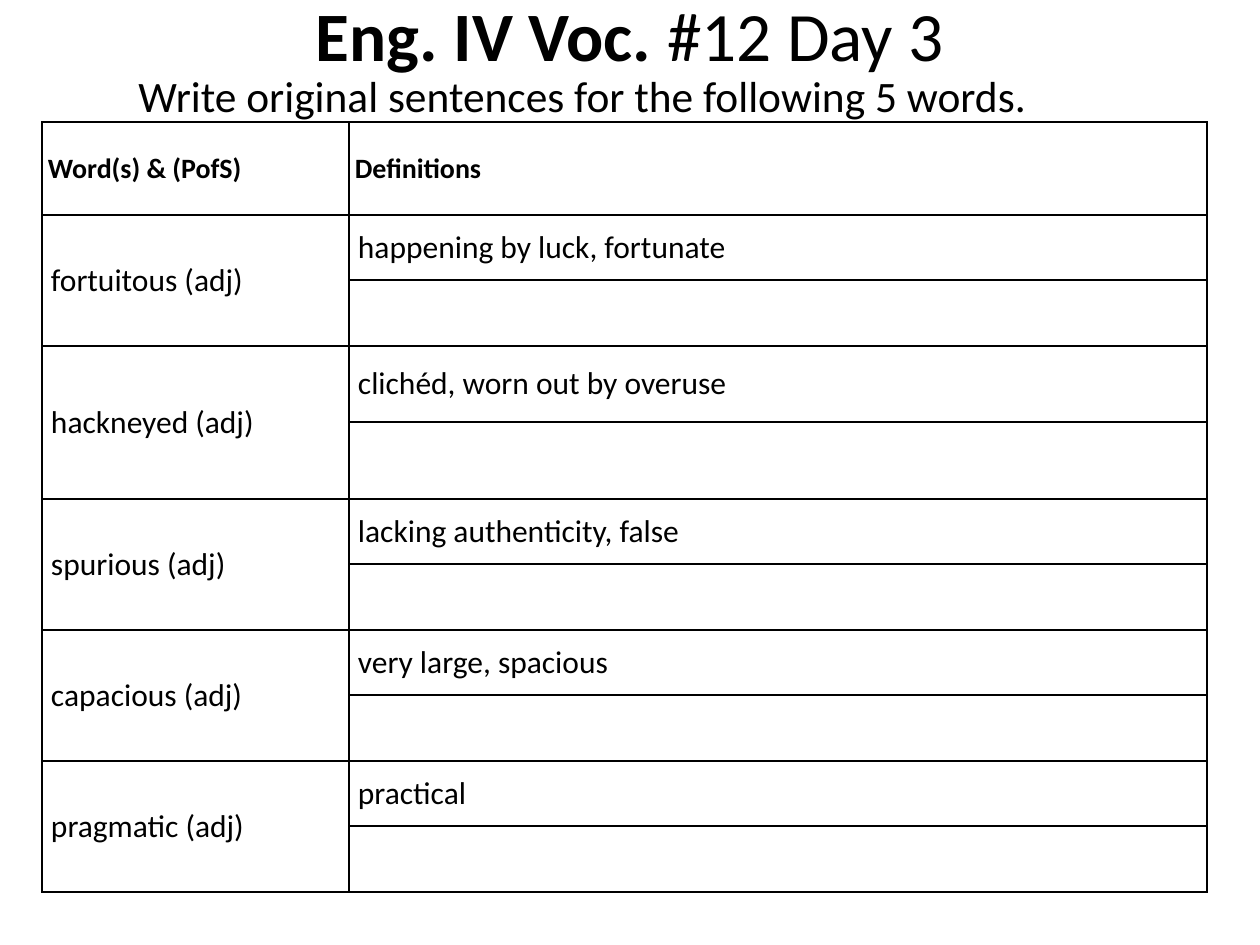
from dataclasses import dataclass

from lxml import etree
from pptx import Presentation
from pptx.dml.color import RGBColor
from pptx.enum.text import MSO_ANCHOR, PP_ALIGN
from pptx.oxml.ns import qn
from pptx.util import Emu, Pt

EMU_PER_PX = 914400 / 126
BLANK_LAYOUT = 6
LEFT, CENTER = PP_ALIGN.LEFT, PP_ALIGN.CENTER
TOP, MIDDLE = MSO_ANCHOR.TOP, MSO_ANCHOR.MIDDLE


@dataclass(frozen=True)
class Theme:
    font: str = "Calibri"
    ink: str = "000000"
    title_size: float = 39.6
    instruction_size: float = 24.8
    header_size: float = 16
    word_size: float = 18
    border_width: float = 1


THEME = Theme()
HEADERS = ("Word(s) & (PofS)", "Definitions")
HEADER_HEIGHT = 93
COLUMN_WIDTHS = (307, 858)
WORDS = (
    ("fortuitous (adj)", "happening by luck, fortunate", 131),
    ("hackneyed (adj)", "clichéd, worn out by overuse", 153),
    ("spurious (adj)", "lacking authenticity, false", 131),
    ("capacious (adj)", "very large, spacious", 131),
    ("pragmatic (adj)", "practical", 131),
)


def px(length):
    return Emu(round(length * EMU_PER_PX))


def write_text(frame, *pieces, size, align=LEFT):
    para = frame.paragraphs[0]
    para.alignment = align
    for text, bold in pieces:
        span = para.add_run()
        span.text = text
        span.font.name = THEME.font
        span.font.size = Pt(size)
        span.font.bold = bold
        span.font.color.rgb = RGBColor.from_string(THEME.ink)


def add_text_box(page, left, top, width, height, *pieces, size, align=LEFT, anchor=TOP):
    box = page.shapes.add_textbox(px(left), px(top), px(width), px(height))
    box.text_frame.word_wrap = True
    box.text_frame.vertical_anchor = anchor
    write_text(box.text_frame, *pieces, size=size, align=align)


def style_cell(cell):
    properties = cell._tc.get_or_add_tcPr()
    for side in ("lnL", "lnR", "lnT", "lnB"):
        line = etree.SubElement(properties, qn(f"a:{side}"), w=str(Pt(THEME.border_width)))
        fill = etree.SubElement(line, qn("a:solidFill"))
        etree.SubElement(fill, qn("a:srgbClr"), val=THEME.ink)
    cell.fill.background()


def fill_cell(cell, text, size, margin, bold=False):
    cell.vertical_anchor = MIDDLE
    cell.margin_left = cell.margin_right = px(margin)
    cell.margin_top = cell.margin_bottom = 0
    write_text(cell.text_frame, (text, bold), size=size)


def add_word_table(page, left, top):
    heights = [HEADER_HEIGHT]
    for _, _, height in WORDS:
        heights += [height // 2, height - height // 2]
    frame = page.shapes.add_table(
        len(heights), len(COLUMN_WIDTHS),
        px(left), px(top), px(sum(COLUMN_WIDTHS)), px(sum(heights)),
    )
    table = frame.table
    table.first_row = table.horz_banding = False
    for column, width in zip(table.columns, COLUMN_WIDTHS):
        column.width = px(width)
    for row, height in zip(table.rows, heights):
        row.height = px(height)
    for cell in table.iter_cells():
        style_cell(cell)
    for column, header in enumerate(HEADERS):
        fill_cell(table.cell(0, column), header, THEME.header_size, 6, bold=True)
    for index, (word, definition, _) in enumerate(WORDS):
        row = 1 + 2 * index
        table.cell(row, 0).merge(table.cell(row + 1, 0))
        for column, text in enumerate((word, definition)):
            fill_cell(table.cell(row, column), text, THEME.word_size, 9)


def main():
    deck = Presentation()
    deck.slide_width, deck.slide_height = px(1260), px(945)
    page = deck.slides.add_slide(deck.slide_layouts[BLANK_LAYOUT])
    add_text_box(
        page, 63, 0, 1134, 67, ("Eng. IV Voc. ", True), ("#12 Day 3", False),
        size=THEME.title_size, align=CENTER, anchor=MIDDLE,
    )
    add_text_box(
        page, 126, 63, 987, 63,
        ("Write original sentences for the following 5 words.", False),
        size=THEME.instruction_size,
    )
    add_word_table(page, 42, 122)
    deck.save("out.pptx")


if __name__ == "__main__":
    main()
